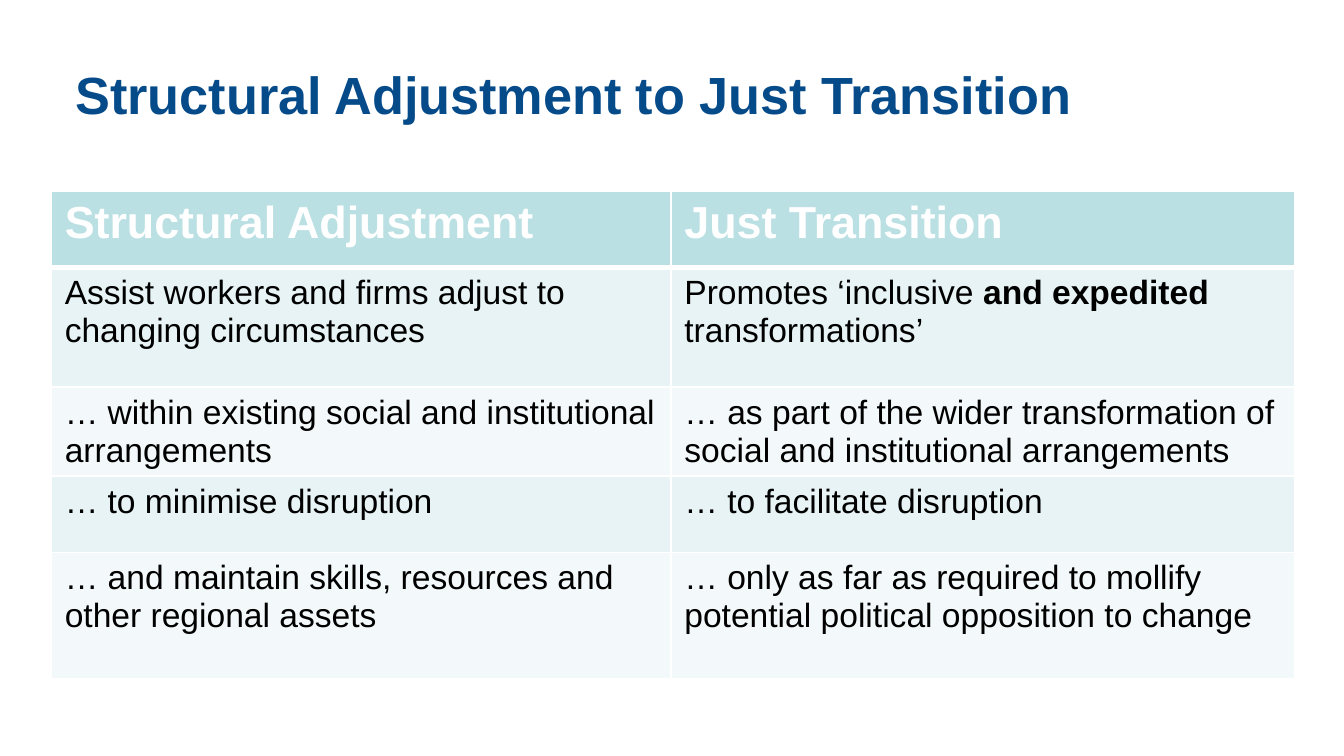
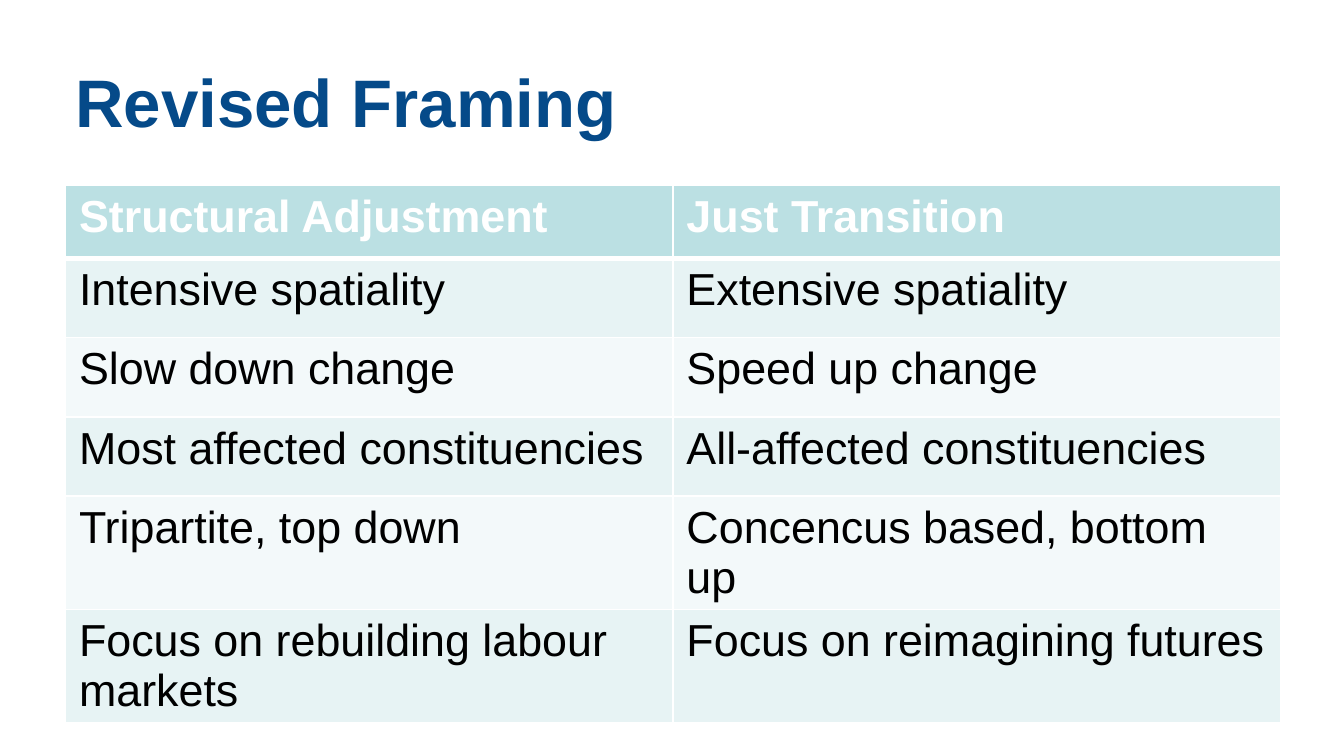
"""Builds two comparison slides on structural adjustment and just transition."""
from dataclasses import dataclass

from lxml import etree
from pptx import Presentation
from pptx import util as u
from pptx.dml.color import RGBColor
from pptx.enum import text
from pptx.oxml.ns import qn


@dataclass(frozen=True)
class Theme:
    """Colours, font and type sizes shared by the slides."""
    font: str = "Arial"
    title: str = "054A89"
    header: str = "BBE0E3"
    bands: tuple = ("E7F3F4", "F3F9FA")
    ink: str = "000000"
    white: str = "FFFFFF"
    header_size: int = 24
    rule: int = 1
    header_rule: int = 3


THEME = Theme()
TITLE_BOX = (1.17, 1.19, 23.04, 1.8)
HEADINGS = ("Structural Adjustment", "Just Transition")

ADJUSTMENT_ROWS = [
    ("Assist workers and firms adjust to changing circumstances",
     [("Promotes ‘inclusive ", False), ("and expedited ", True), ("transformations’", False)]),
    ("… within existing social and institutional arrangements",
     "… as part of the wider transformation of social and institutional arrangements"),
    ("… to minimise disruption", "… to facilitate disruption"),
    ("… and maintain skills, resources and other regional assets",
     "… only as far as required to mollify potential political opposition to change"),
]
FRAMING_ROWS = [
    ("Intensive spatiality", "Extensive spatiality"),
    ("Slow down change", "Speed up change"),
    ("Most affected constituencies", "All-affected constituencies"),
    ("Tripartite, top down", "Concencus based, bottom up"),
    ("Focus on rebuilding labour markets", "Focus on reimagining futures"),
]


def add_run(p, words, size, color, bold):
    """Append one formatted run to a paragraph."""
    r = p.add_run()
    r.text = words
    r.font.name = THEME.font
    r.font.size = u.Pt(size)
    r.font.bold = bold
    r.font.color.rgb = RGBColor.from_string(color)


def add_title(s, words, size, box):
    """Fill and place the title placeholder."""
    sp = s.shapes.title
    sp.left, sp.top, sp.width, sp.height = map(u.Cm, box)
    tf = sp.text_frame
    tf.word_wrap = True
    tf.auto_size = text.MSO_AUTO_SIZE.NONE
    tf.vertical_anchor = text.MSO_ANCHOR.TOP
    p = tf.paragraphs[0]
    p.alignment = text.PP_ALIGN.LEFT
    p.line_spacing = 0.9
    p.space_before = u.Pt(0)
    add_run(p, words, size, THEME.title, True)


def set_borders(cell, row):
    """Draw white cell borders, heavier under the header row."""
    tcPr = cell._tc.get_or_add_tcPr()
    heavy = {0: "lnB", 1: "lnT"}.get(row)
    for side in ("lnL", "lnR", "lnT", "lnB"):
        width = THEME.header_rule if side == heavy else THEME.rule
        ln = etree.SubElement(tcPr, qn(f"a:{side}"), w=str(u.Pt(width)))
        fill = etree.SubElement(ln, qn("a:solidFill"))
        etree.SubElement(fill, qn("a:srgbClr"), val=THEME.white)


def style_cell(cell, row, content, size):
    """Write, border and fill one table cell."""
    header = row == 0
    runs = [(content, header)] if isinstance(content, str) else content
    for words, bold in runs:
        add_run(cell.text_frame.paragraphs[0], words,
                THEME.header_size if header else size,
                THEME.white if header else THEME.ink, bold)
    set_borders(cell, row)
    cell.fill.solid()
    color = THEME.header if header else THEME.bands[(row - 1) % 2]
    cell.fill.fore_color.rgb = RGBColor.from_string(color)


def add_comparison(s, origin, widths, heights, rows, size):
    """Place a two-column comparison table at the given origin."""
    rows = [HEADINGS, *rows]
    left, top = origin
    frame = s.shapes.add_table(len(rows), len(widths), u.Cm(left), u.Cm(top),
                               u.Cm(sum(widths)), u.Cm(sum(heights)))
    table = frame.table
    for column, width in zip(table.columns, widths):
        column.width = u.Cm(width)
    for i, (height, contents) in enumerate(zip(heights, rows)):
        table.rows[i].height = u.Cm(height)
        for j, content in enumerate(contents):
            style_cell(table.cell(i, j), i, content, size)


def add_comparison_slide(prs, title, title_size, **table):
    """Add one slide with a title over a comparison table."""
    s = prs.slides.add_slide(prs.slide_layouts[5])
    add_title(s, title, title_size, TITLE_BOX)
    add_comparison(s, **table)


def main():
    """Build and save the presentation."""
    prs = Presentation()
    prs.slide_width, prs.slide_height = u.Cm(25.4), u.Cm(14.29)
    add_comparison_slide(prs, "Structural Adjustment to Just Transition", 28,
                         origin=(0.97, 3.61), widths=(11.71, 11.79),
                         heights=(1.45, 2.26, 1.57, 1.45, 2.39),
                         rows=ADJUSTMENT_ROWS, size=18)
    add_comparison_slide(prs, "Revised Framing", 36,
                         origin=(1.24, 3.51), widths=(11.48, 11.48),
                         heights=(1.37, *[1.5] * len(FRAMING_ROWS)),
                         rows=FRAMING_ROWS, size=24)
    prs.save("out.pptx")


if __name__ == "__main__":
    main()
